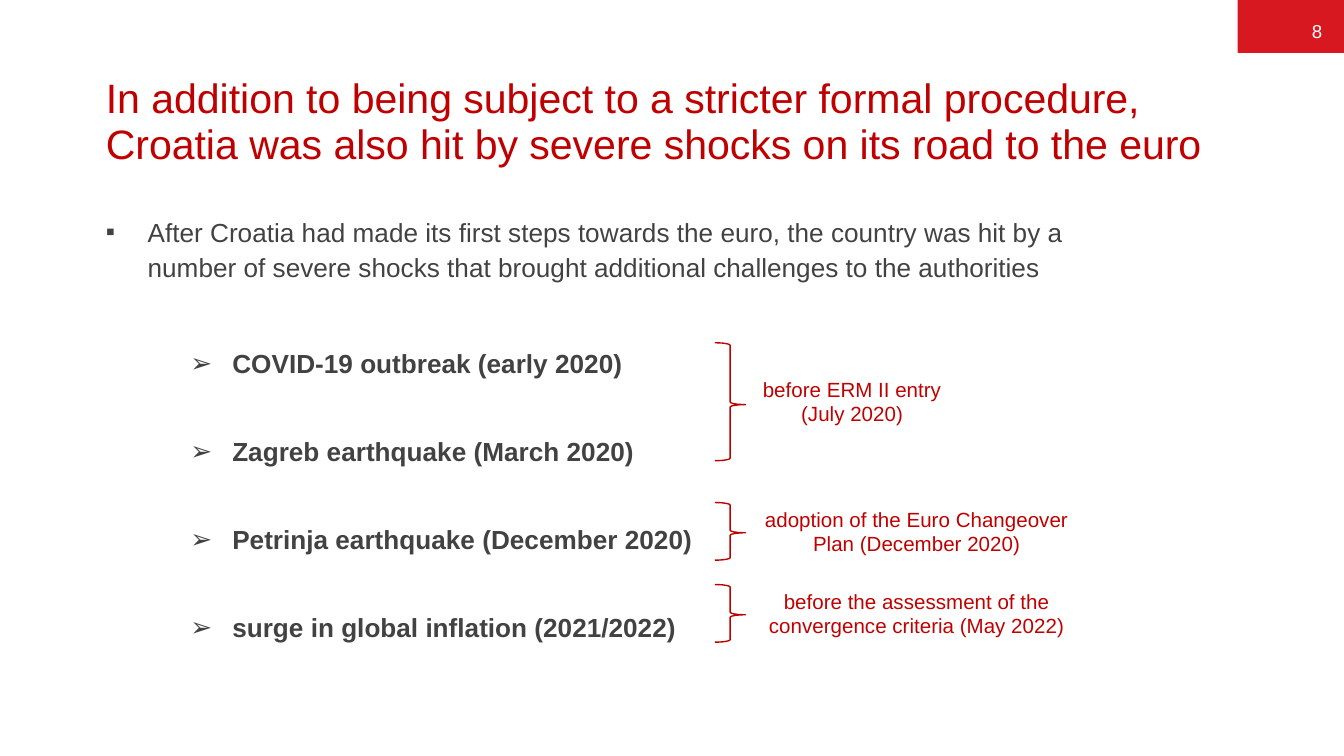
from lxml.etree import SubElement as Sub
from pptx import Presentation
from pptx.dml.color import RGBColor
from pptx.enum.shapes import MSO_SHAPE as Shape
from pptx.enum.text import MSO_ANCHOR as Anchor, MSO_AUTO_SIZE as Fit, PP_ALIGN as Align
from pptx.oxml.ns import qn
from pptx.util import Cm, Pt

RED = RGBColor(0xD8, 0x18, 0x20)
DARK = RGBColor(0xC0, 0x00, 0x00)
BRACE = RGBColor(0xBC, 0x00, 0x00)
GREY = RGBColor(0x42, 0x42, 0x42)
WHITE = RGBColor(0xFF, 0xFF, 0xFF)


class Deck:
    font = "Arial"

    def __init__(self, wide, high):
        self.prs = Presentation()
        self.prs.slide_width = Cm(wide)
        self.prs.slide_height = Cm(high)
        self.slide = self.prs.slides.add_slide(self.prs.slide_layouts[1])

    def run(self, para, text, size, color, bold=False):
        run = para.add_run()
        run.text = text
        font = run.font
        font.name, font.size, font.bold = self.font, Pt(size), bold
        font.color.rgb = color

    def place(self, item, box):
        item.left, item.top, item.width, item.height = map(Cm, box)

    def frame(self, item, anchor, pad=(0, 0, 0, 0)):
        frame = item.text_frame
        frame.word_wrap = True
        frame.auto_size = Fit.NONE
        frame.vertical_anchor = anchor
        (frame.margin_left, frame.margin_top,
         frame.margin_right, frame.margin_bottom) = map(Cm, pad)
        return frame

    def title(self, box, text):
        item = self.slide.shapes.title
        self.place(item, box)
        para = self.frame(item, Anchor.BOTTOM).paragraphs[0]
        para.alignment = Align.LEFT
        para.line_spacing = 0.95
        self.run(para, text, 22, DARK)

    def bullet(self, para, mark, left):
        props = para._p.get_or_add_pPr()
        props.set("marL", str(Cm(left)))
        props.set("indent", str(-Cm(0.79)))
        Sub(props, qn("a:buFont")).set("typeface", self.font)
        Sub(props, qn("a:buChar")).set("char", mark)

    def body(self, box, lead, items):
        item = self.slide.placeholders[1]
        self.place(item, box)
        frame = self.frame(item, Anchor.TOP)
        rows = [(lead, 0, 0)]
        rows += [(text, 1, 28 if i else 32) for i, text in enumerate(items)]
        for i, (text, level, gap) in enumerate(rows):
            para = frame.add_paragraph() if i else frame.paragraphs[0]
            para.level = level
            para.line_spacing = 1.14
            para.space_before = Pt(gap)
            self.bullet(para, "➢" if level else "▪", 2.39 if level else 0.79)
            self.run(para, text, 14, GREY, bool(level))

    def text(self, box, lines, size, color, align, anchor, pad):
        item = self.slide.shapes.add_textbox(*map(Cm, box))
        frame = self.frame(item, anchor, pad)
        for i, line in enumerate(lines):
            para = frame.add_paragraph() if i else frame.paragraphs[0]
            para.alignment = align
            self.run(para, line, size, color)

    def block(self, box, color):
        item = self.slide.shapes.add_shape(Shape.RECTANGLE, *map(Cm, box))
        item.shadow.inherit = False
        item.fill.solid()
        item.fill.fore_color.rgb = color
        item.line.fill.background()

    def brace(self, top, high):
        box = map(Cm, (13.51, top, 0.58, high))
        item = self.slide.shapes.add_shape(Shape.RIGHT_BRACE, *box)
        item.shadow.inherit = False
        item.adjustments[0] = 0.083
        item.adjustments[1] = 0.524
        item.fill.background()
        item.line.color.rgb = BRACE
        item.line.width = Pt(0.75)

    def note(self, top, wide, lines):
        self.text((14.1, top, wide, 1.19), lines, 11, DARK,
                  Align.CENTER, Anchor.TOP, (0.25, 0.13, 0.25, 0.13))


def main():
    deck = Deck(25.4, 14.29)
    deck.block((23.39, 0, 2.01, 1), RED)
    deck.text((23.39, 0, 1.6, 1), ["8"], 10, WHITE,
              Align.RIGHT, Anchor.BOTTOM, (0, 0, 0, 0.2))
    deck.title((2, 1.42, 21.39, 1.78),
               "In addition to being subject to a stricter formal procedure, "
               "Croatia was also hit by severe shocks on its road to the euro")
    deck.body((2, 4, 19.46, 8.6),
              "After Croatia had made its first steps towards the euro, "
              "the country was hit by a number of severe shocks that "
              "brought additional challenges to the authorities",
              ["COVID-19 outbreak (early 2020)",
               "Zagreb earthquake (March 2020)",
               "Petrinja earthquake (December 2020)",
               "surge in global inflation (2021/2022)"])
    notes = [
        (6.48, 2.23, 6.99, 4.01, ["before ERM II entry", "(July 2020)"]),
        (9.5, 1.09, 9.45, 6.45,
         ["adoption of the Euro Changeover Plan (December 2020)"]),
        (11.05, 1.09, 11, 6.45,
         ["before the assessment of the convergence criteria (May 2022)"]),
    ]
    for top, high, at, wide, lines in notes:
        deck.brace(top, high)
        deck.note(at, wide, lines)
    deck.prs.save("out.pptx")


if __name__ == "__main__":
    main()
